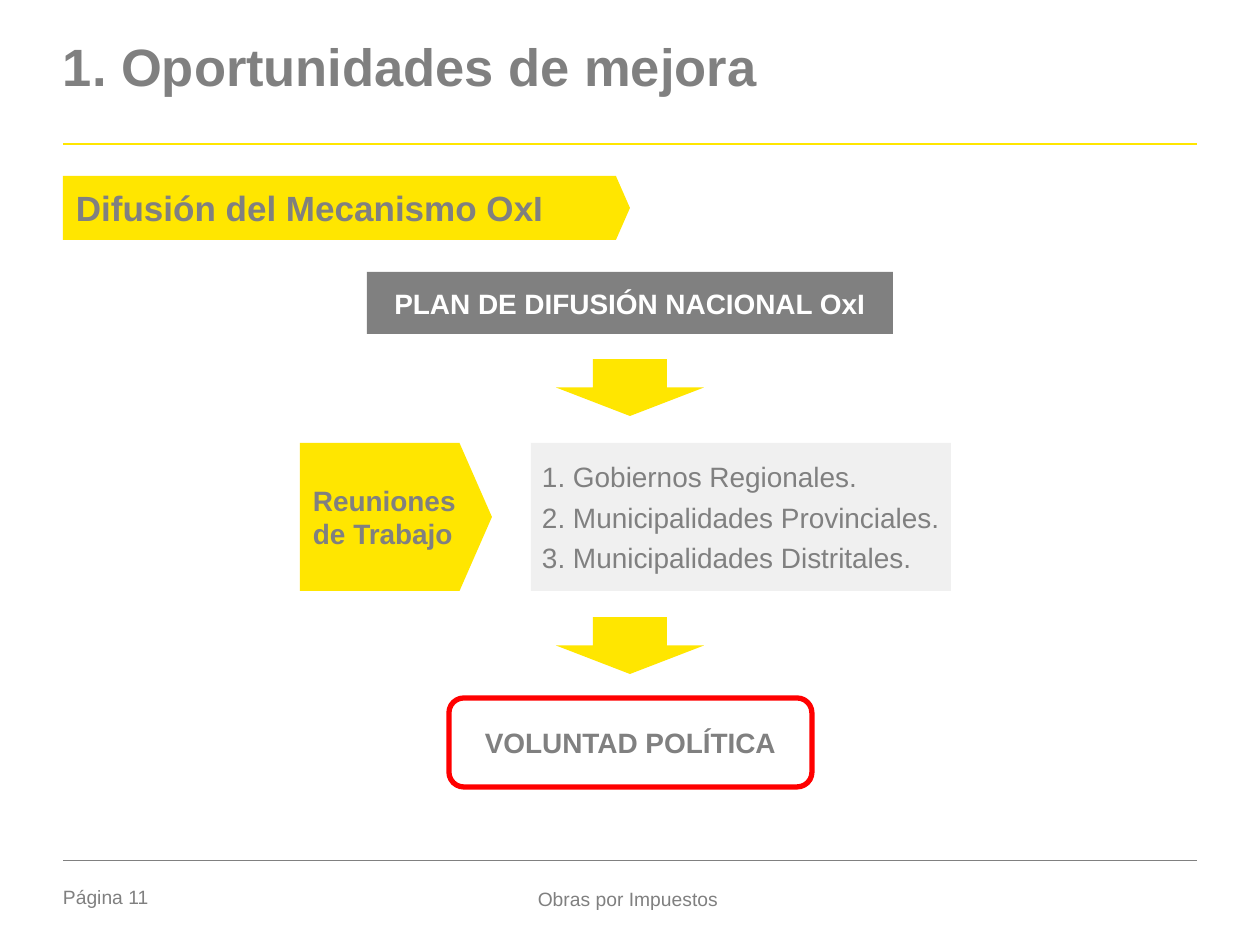
from dataclasses import dataclass

from lxml.etree import SubElement
from pptx import Presentation
from pptx.dml.color import RGBColor
from pptx.enum.shapes import MSO_CONNECTOR, MSO_SHAPE
from pptx.enum.text import MSO_ANCHOR, PP_ALIGN
from pptx.oxml.ns import qn
from pptx.util import Pt

PX = 914400 / 126


def px(n):
    return round(n * PX)


@dataclass(frozen=True)
class Theme:
    font: str = "Arial"
    yellow: str = "FFE600"
    gray: str = "808080"
    light: str = "F0F0F0"
    white: str = "FFFFFF"
    red: str = "FF0000"
    title: int = 30
    heading: int = 20
    body: int = 16
    footer: int = 11


T = Theme()


def rgb(value):
    return RGBColor.from_string(value)


def write(sp, text, size=T.body, color=T.gray, bold=False, align=PP_ALIGN.LEFT,
          anchor=MSO_ANCHOR.MIDDLE, inset=(13, 6), before=0, spacing=None):
    """Write one paragraph for each line of text."""
    tf = sp.text_frame
    tf.word_wrap = True
    tf.vertical_anchor = anchor
    tf.margin_left = tf.margin_right = px(inset[0])
    tf.margin_top = tf.margin_bottom = px(inset[1])
    for i, line in enumerate(text.split("\n")):
        p = tf.add_paragraph() if i else tf.paragraphs[0]
        p.alignment = align
        p.space_before = Pt(before)
        if spacing:
            p.line_spacing = spacing
        r = p.add_run()
        r.text = line
        r.font.name, r.font.size, r.font.bold = T.font, Pt(size), bold
        r.font.color.rgb = rgb(color)


class SlideBuilder:
    def __init__(self, s):
        self.s = s

    def text(self, x, y, w, h, text, **fmt):
        sp = self.s.shapes.add_textbox(px(x), px(y), px(w), px(h))
        write(sp, text, inset=(0, 0), **fmt)

    def shape(self, kind, x, y, w, h, fill=None, line=None, adj=None, text=None, **fmt):
        sp = self.s.shapes.add_shape(kind, px(x), px(y), px(w), px(h))
        sp.shadow.inherit = False
        if fill:
            sp.fill.solid()
            sp.fill.fore_color.rgb = rgb(fill)
        else:
            sp.fill.background()
        if line:
            sp.line.color.rgb = rgb(line)
            sp.line.width = Pt(3)
        else:
            sp.line.fill.background()
        if adj is not None:
            sp.adjustments[0] = adj
        if text:
            write(sp, text, **fmt)

    def banner(self, x, y, w, h, text, size):
        self.shape(MSO_SHAPE.PENTAGON, x, y, w, h, T.yellow, adj=0.219, text=text,
                   size=size, bold=True, align=PP_ALIGN.JUSTIFY)

    def down_arrow(self, y):
        self.shape(MSO_SHAPE.DOWN_ARROW, 556, y, 148, 57, T.yellow)

    def rule(self, y, color, width):
        c = self.s.shapes.add_connector(MSO_CONNECTOR.STRAIGHT, px(63), px(y), px(1197), px(y))
        c.line.color.rgb = rgb(color)
        c.line.width = Pt(width)
        SubElement(c._element.spPr, qn("a:effectLst"))


def main():
    prs = Presentation()
    prs.slide_width, prs.slide_height = px(1260), px(945)
    b = SlideBuilder(prs.slides.add_slide(prs.slide_layouts[6]))

    # Title and rules
    b.text(63, 44, 1134, 118, "1. Oportunidades de mejora", size=T.title, bold=True,
           anchor=MSO_ANCHOR.TOP, spacing=0.85)
    b.rule(144, T.yellow, 1.5)
    b.rule(860, T.gray, 0.25)

    # Section heading
    b.banner(63, 176, 567, 64, "Difusión del Mecanismo OxI", T.heading)

    # Flow from the plan to the result
    b.shape(MSO_SHAPE.RECTANGLE, 367, 272, 526, 62, T.gray, text="PLAN DE DIFUSIÓN NACIONAL OxI",
            color=T.white, bold=True, align=PP_ALIGN.CENTER)
    b.down_arrow(359)
    b.banner(300, 443, 192, 148, "Reuniones de Trabajo", T.body)
    b.shape(MSO_SHAPE.RECTANGLE, 531, 443, 420, 148, T.light, inset=(11, 0), before=4,
            text="1. Gobiernos Regionales.\n2. Municipalidades Provinciales.\n"
                 "3. Municipalidades Distritales.")
    b.down_arrow(617)
    b.shape(MSO_SHAPE.ROUNDED_RECTANGLE, 449, 698, 363, 89, line=T.red,
            text="VOLUNTAD POLÍTICA", bold=True, align=PP_ALIGN.CENTER)

    # Footer
    b.text(63, 885, 100, 28, "Página 11", size=T.footer, anchor=MSO_ANCHOR.TOP)
    b.text(431, 885, 394, 28, "Obras por Impuestos", size=T.footer, align=PP_ALIGN.CENTER)

    prs.save("out.pptx")


if __name__ == "__main__":
    main()
